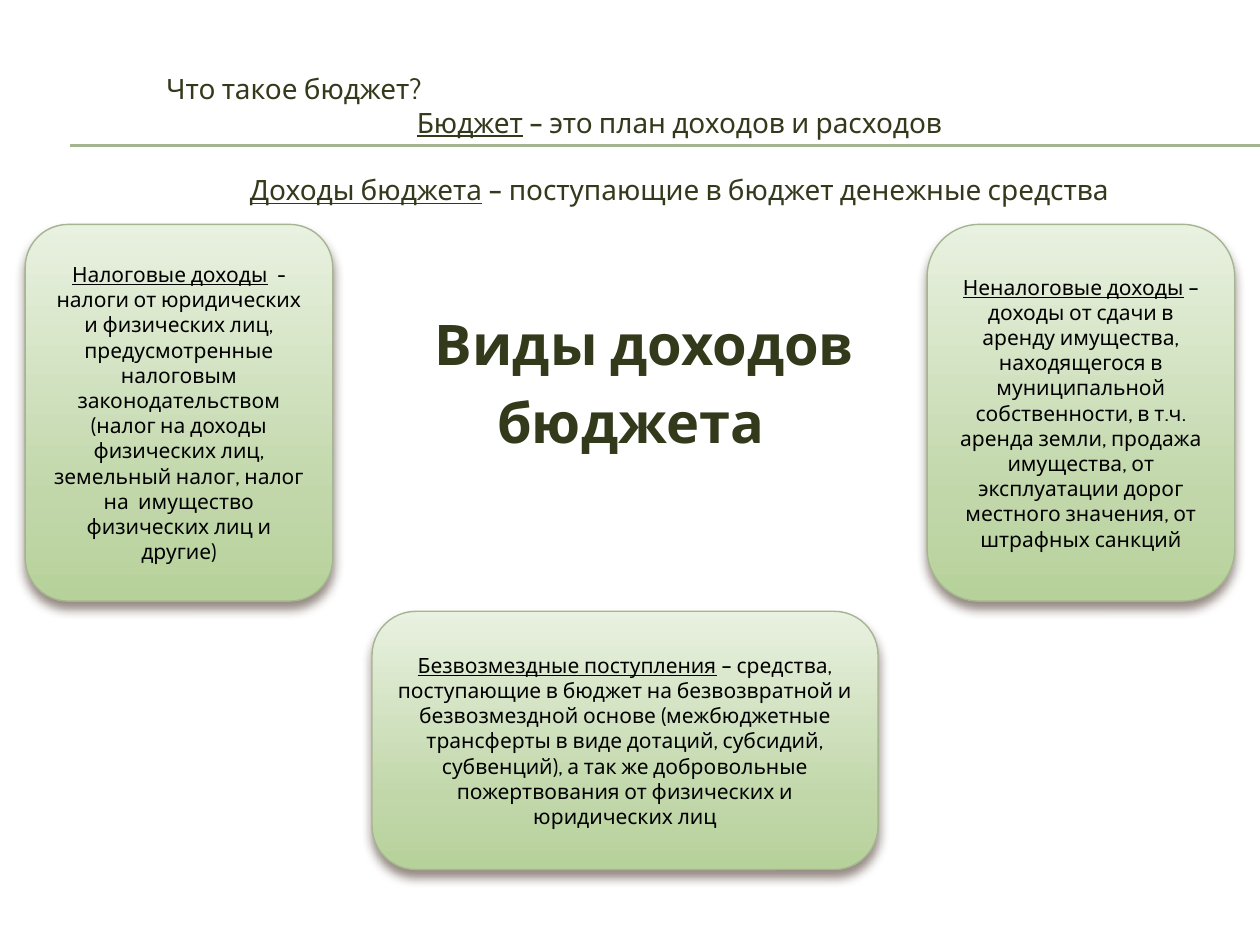
from lxml import etree
from pptx import Presentation
from pptx.dml.color import RGBColor
from pptx.enum.shapes import MSO_CONNECTOR, MSO_SHAPE
from pptx.enum.text import MSO_ANCHOR, MSO_AUTO_SIZE, PP_ALIGN
from pptx.oxml import parse_xml
from pptx.oxml.ns import nsdecls, qn
from pptx.util import Pt

STRAIGHT = MSO_CONNECTOR.STRAIGHT
ROUNDED = MSO_SHAPE.ROUNDED_RECTANGLE
TOP, MIDDLE = MSO_ANCHOR.TOP, MSO_ANCHOR.MIDDLE
NO_AUTOFIT = MSO_AUTO_SIZE.NONE
LEFT, CENTER = PP_ALIGN.LEFT, PP_ALIGN.CENTER

FONT = "Cabin"
DARK_GREEN = RGBColor(0x33, 0x3A, 0x1C)
BLACK = RGBColor(0x00, 0x00, 0x00)
SAGE = RGBColor(0xA5, 0xB5, 0x92)
SHADOW_BROWN = RGBColor(0x4E, 0x3B, 0x30)
CARD_GRADIENT = [
    (0, RGBColor(0xE9, 0xF1, 0xE0)),
    (72, RGBColor(0xC1, 0xD7, 0xAA)),
    (100, RGBColor(0xB7, 0xD1, 0x9A)),
]

SLIDE_WIDTH, SLIDE_HEIGHT = 720, 540
MARGIN = 14.4
CARD_TOP = 128.2
SIDE_WIDTH, SIDE_HEIGHT = 175.8, 215.3


def place(shape, box):
    shape.left, shape.top, shape.width, shape.height = map(Pt, box)


def format_paragraph(paragraph, size, color, alignment=CENTER, bold=False):
    paragraph.alignment = alignment
    font = paragraph.font
    font.name, font.size, font.bold = FONT, Pt(size), bold
    font.color.rgb = color


def add_definition(paragraph, term, meaning):
    """Write an underlined term followed by its meaning."""
    term_run = paragraph.add_run()
    term_run.text = term
    term_run.font.underline = True
    paragraph.add_run().text = meaning


def add_rules(slide, box):
    """Draw the double rule along the top and bottom of the box."""
    left, top, width, height = box
    for y in (top, top + height):
        rule = slide.shapes.add_connector(
            STRAIGHT, Pt(left), Pt(y), Pt(left + width), Pt(y))
        rule.line.color.rgb = SAGE
        rule.line.width = Pt(0.75)
        etree.SubElement(rule._element.spPr, qn("a:effectLst"))


def fill_heading(title, box, question, definitions):
    place(title, box)
    frame = title.text_frame
    frame.word_wrap = True
    frame.auto_size = NO_AUTOFIT
    frame.vertical_anchor = TOP
    frame.text = question
    format_paragraph(frame.paragraphs[0], 16, DARK_GREEN, LEFT)
    for space_before, term, meaning in definitions:
        paragraph = frame.add_paragraph()
        format_paragraph(paragraph, 16, DARK_GREEN)
        paragraph.space_before = Pt(space_before)
        add_definition(paragraph, term, meaning)


def fill_caption(body, box, lines):
    """Set the large central caption; each line has its own left indent."""
    place(body, box)
    frame = body.text_frame
    frame.auto_size = NO_AUTOFIT
    frame.vertical_anchor = TOP
    frame.margin_top = Pt(48.4)
    for index, (text, indent) in enumerate(lines):
        paragraph = frame.add_paragraph() if index else frame.paragraphs[0]
        paragraph.text = text
        format_paragraph(paragraph, 32, DARK_GREEN, bold=True)
        paragraph.space_before = Pt(6.4 if index else 0)
        properties = paragraph._p.get_or_add_pPr()
        properties.set("marL", str(Pt(indent)))
        properties.set("indent", "0")
        etree.SubElement(properties, qn("a:buNone"))


def style_card(card):
    """Give a card its outline, vertical gradient and soft shadow."""
    card.line.color.rgb = SAGE
    card.line.width = Pt(0.79)
    stops = "".join(
        f'<a:gs pos="{position * 1000}"><a:srgbClr val="{color}"/></a:gs>'
        for position, color in CARD_GRADIENT)
    properties = card._element.spPr
    properties.find(qn("a:prstGeom")).addnext(parse_xml(
        f'<a:gradFill {nsdecls("a")} rotWithShape="1"><a:gsLst>{stops}</a:gsLst>'
        '<a:lin ang="5400000" scaled="0"/></a:gradFill>'))
    properties.append(parse_xml(
        f'<a:effectLst {nsdecls("a")}><a:outerShdw blurRad="{Pt(6)}" '
        f'dist="{Pt(4)}" dir="5400000" rotWithShape="0">'
        f'<a:srgbClr val="{SHADOW_BROWN}"><a:alpha val="60000"/></a:srgbClr>'
        '</a:outerShdw></a:effectLst>'))


def add_card(slide, box, rounding, term, meaning):
    card = slide.shapes.add_shape(ROUNDED, *map(Pt, box))
    card.adjustments[0] = rounding
    style_card(card)
    frame = card.text_frame
    frame.word_wrap = True
    frame.vertical_anchor = MIDDLE
    format_paragraph(frame.paragraphs[0], 12, BLACK)
    add_definition(frame.paragraphs[0], term, meaning)


def build_budget_slide(presentation):
    slide = presentation.slides.add_slide(presentation.slide_layouts[1])
    title, body = slide.placeholders

    add_rules(slide, (40.3, 82.8, SLIDE_WIDTH - 40.3, 0.7))
    fill_heading(title, (87.8, 37.4, 601.2, 85), "Что такое бюджет?", [
        (0, "Бюджет", " – это план доходов и расходов"),
        (19.2, "Доходы бюджета", " – поступающие в бюджет денежные средства"),
    ])
    fill_caption(body, (MARGIN, CARD_TOP, 691.9, 380.2),
                 [("Виды доходов", 16), ("бюджета", 0)])

    # Kinds of income: right, left and bottom cards
    right = SLIDE_WIDTH - MARGIN - SIDE_WIDTH
    cards = [
        ((right, CARD_TOP, SIDE_WIDTH, SIDE_HEIGHT), 0.17,
         "Неналоговые доходы",
         " – доходы от сдачи в аренду имущества, находящегося в муниципальной "
         "собственности, в т.ч. аренда земли, продажа имущества, от "
         "эксплуатации дорог местного значения, от штрафных санкций"),
        ((MARGIN, CARD_TOP, SIDE_WIDTH, SIDE_HEIGHT), 0.14,
         "Налоговые доходы",
         "  - налоги от юридических и физических лиц, предусмотренные "
         "налоговым законодательством (налог на доходы физических лиц, "
         "земельный налог, налог на  имущество физических лиц и другие)"),
        ((212.6, 349.3, 289.2, 147.6), 0.17,
         "Безвозмездные поступления",
         " – средства, поступающие в бюджет на безвозвратной и безвозмездной "
         "основе (межбюджетные трансферты в виде дотаций, субсидий, "
         "субвенций), а так же добровольные пожертвования от физических и "
         "юридических лиц"),
    ]
    for box, rounding, term, meaning in cards:
        add_card(slide, box, rounding, term, meaning)


def main():
    presentation = Presentation()
    presentation.slide_width = Pt(SLIDE_WIDTH)
    presentation.slide_height = Pt(SLIDE_HEIGHT)
    build_budget_slide(presentation)
    presentation.save("out.pptx")


if __name__ == "__main__":
    main()
